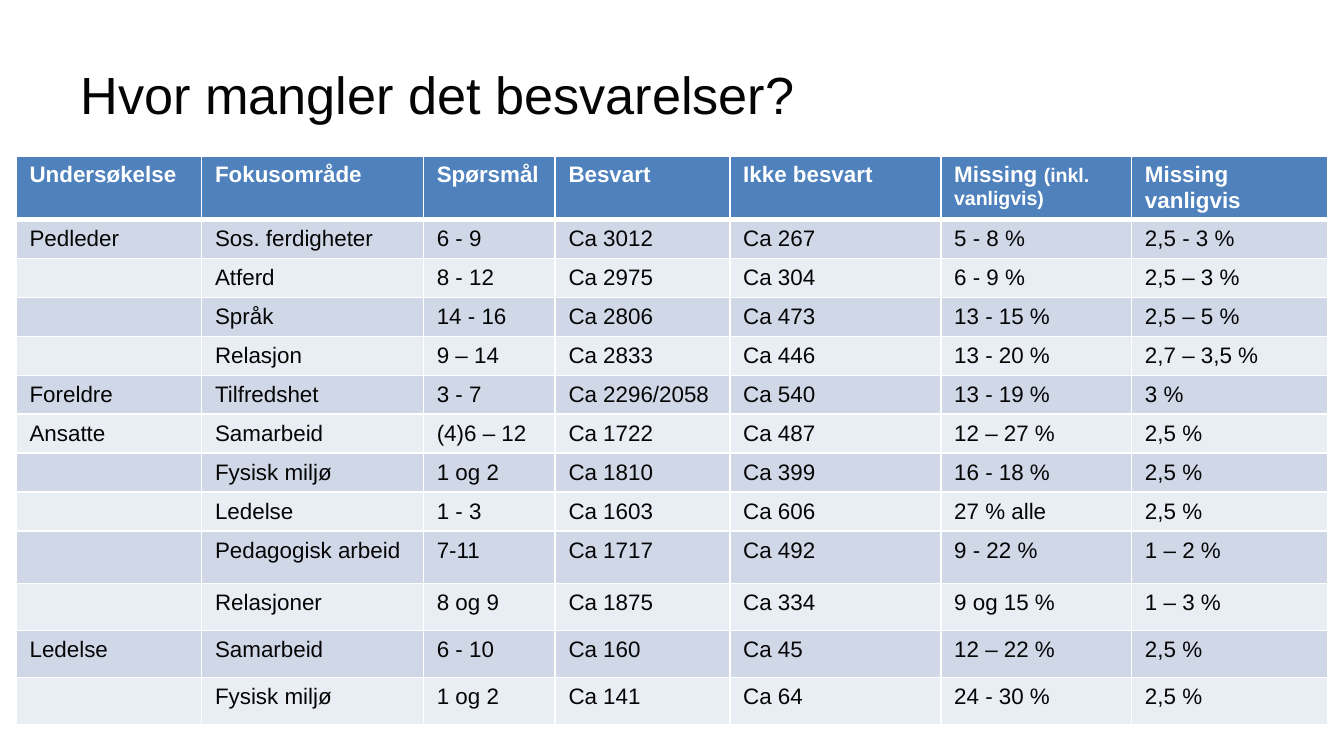
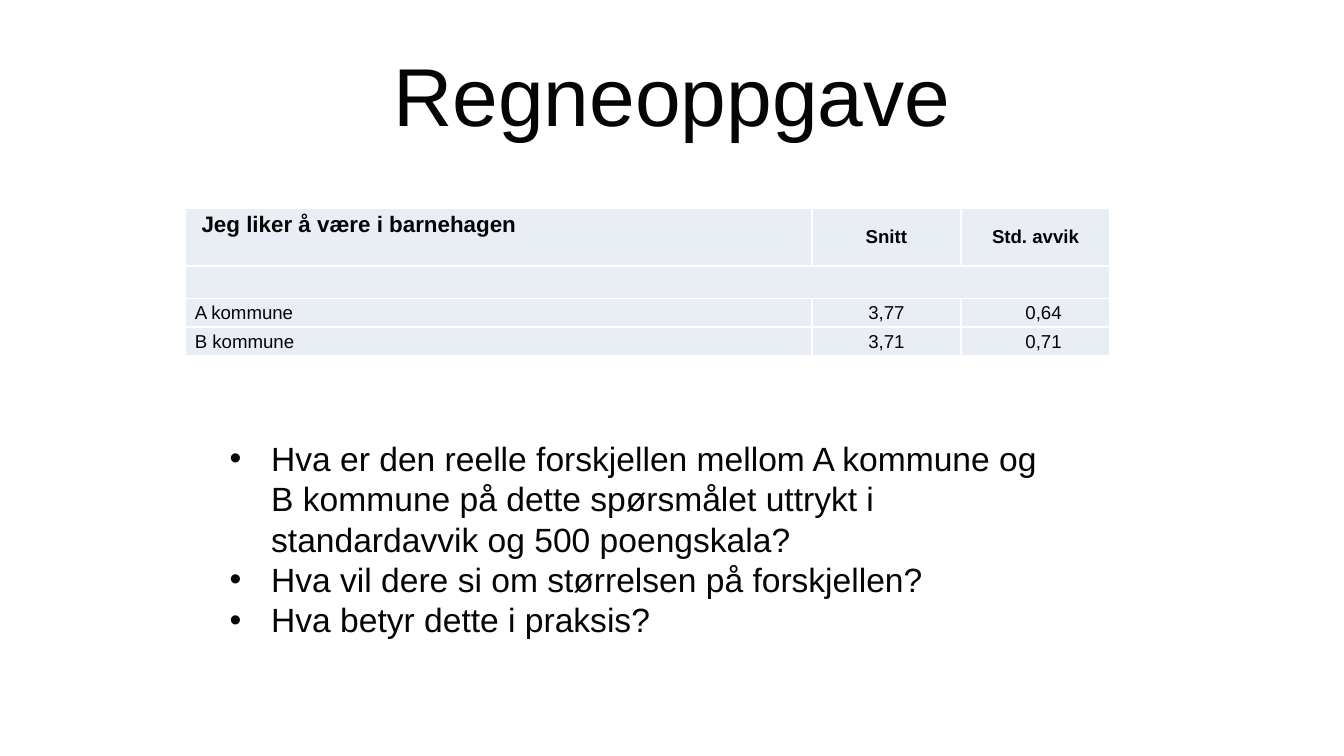
from lxml import etree
from pptx import Presentation
from pptx import util as u
from pptx.dml.color import RGBColor
from pptx.enum import text as t
from pptx.oxml.ns import qn

HUES = {"ink": "050505", "white": "FFFFFF", "head": "4F81BD",
        "dark": "D0D8E8", "light": "E9EDF4"}
FACE = "Arial"
LEFT, MID = t.PP_ALIGN.LEFT, t.PP_ALIGN.CENTER

# Slide 1 table
GAPS = [
    ["Undersøkelse", "Fokusområde", "Spørsmål", "Besvart", "Ikke besvart",
     [("Missing ", 12), ("(inkl. vanligvis)", 10.5)], "Missing vanligvis"],
    ["Pedleder", "Sos. ferdigheter", "6 - 9", "Ca 3012", "Ca 267", "5 - 8 %", "2,5 - 3 %"],
    ["", "Atferd", "8 - 12", "Ca 2975", "Ca 304", "6 - 9 %", "2,5 – 3 %"],
    ["", "Språk", "14 - 16", "Ca 2806", "Ca 473", "13 - 15 %", "2,5 – 5 %"],
    ["", "Relasjon", "9 – 14", "Ca 2833", "Ca 446", "13 - 20 %", "2,7 – 3,5 %"],
    ["Foreldre", "Tilfredshet", "3 - 7", "Ca 2296/2058", "Ca 540", "13 - 19 %", "3 %"],
    ["Ansatte", "Samarbeid", "(4)6 – 12", "Ca 1722", "Ca 487", "12 – 27 %", "2,5 %"],
    ["", "Fysisk miljø", "1 og 2", "Ca 1810", "Ca 399", "16 - 18 %", "2,5 %"],
    ["", "Ledelse", "1 - 3", "Ca 1603", "Ca 606", "27 % alle", "2,5 %"],
    ["", "Pedagogisk arbeid", "7-11", "Ca 1717", "Ca 492", "9 - 22 %", "1 – 2 %"],
    ["", "Relasjoner", "8 og 9", "Ca 1875", "Ca 334", "9 og 15 %", "1 – 3 %"],
    ["Ledelse", "Samarbeid", "6 - 10", "Ca 160", "Ca 45", "12 – 22 %", "2,5 %"],
    ["", "Fysisk miljø", "1 og 2", "Ca 141", "Ca 64", "24 - 30 %", "2,5 %"],
]

# Slide 2 table and questions
MEANS = [
    ["Jeg liker å være i barnehagen", "Snitt", "Std. avvik"],
    ["", "", ""],
    ["A kommune", "3,77", "0,64"],
    ["B kommune", "3,71", "0,71"],
]
TASKS = [
    "Hva er den reelle forskjellen mellom A kommune og B kommune på dette "
    "spørsmålet uttrykt i standardavvik og 500 poengskala?",
    "Hva vil dere si om størrelsen på forskjellen?",
    "Hva betyr dette i praksis?",
]


def box(*vals):
    return [u.Inches(v) for v in vals]


def apply(item, **vals):
    for key, val in vals.items():
        setattr(item, key, val)


def write(par, words, size, hue="ink", bold=False, align=LEFT):
    """Fill a paragraph with a string or a list of (words, size)."""
    par.alignment = align
    parts = [(words, size)] if isinstance(words, str) else words
    for part, pts in parts:
        if part:
            run = par.add_run()
            run.text = part
            apply(run.font, name=FACE, size=u.Pt(pts), bold=bold)
            run.font.color.rgb = RGBColor.from_string(HUES[hue])
        else:
            # An empty cell keeps the height of its text size
            end = etree.SubElement(par._p, qn("a:endParaRPr"))
            end.set("sz", str(int(pts * 100)))
            etree.SubElement(end, qn("a:latin")).set("typeface", FACE)


def edge(cell, **wide):
    """Draw white cell borders; wide gives widths for sides L, R, T, B."""
    props = cell._tc.get_or_add_tcPr()
    for side in "LRTB":
        line = etree.SubElement(props, qn("a:ln" + side))
        line.set("w", str(u.Pt(wide.get(side, 1))))
        fill = etree.SubElement(line, qn("a:solidFill"))
        etree.SubElement(fill, qn("a:srgbClr")).set("val", HUES["white"])


def paint(cell, hue):
    cell.fill.solid()
    cell.fill.fore_color.rgb = RGBColor.from_string(HUES[hue])


def grid(slide, rows, left, top, cols, highs):
    """Add an empty table with the given column widths and row heights."""
    frame = slide.shapes.add_table(
        len(rows), len(cols), *box(left, top, sum(cols), sum(highs)))
    table = frame.table
    table.horz_banding = False
    for col, wide in zip(table.columns, cols):
        col.width = u.Inches(wide)
    for row, high in zip(table.rows, highs):
        row.height = u.Inches(high)
    return table


def start(deck, words, size, align):
    """Add a slide with its title."""
    slide = deck.slides.add_slide(deck.slide_layouts[5])
    title = slide.shapes.title
    left, top, wide, high = box(0.5, 0.23, 9, 0.94)
    apply(title, left=left, top=top, width=wide, height=high)
    apply(title.text_frame, vertical_anchor=t.MSO_ANCHOR.MIDDLE,
          word_wrap=True, auto_size=t.MSO_AUTO_SIZE.NONE)
    write(title.text_frame.paragraphs[0], words, size, align=align)
    return slide


def gaps(slide):
    """Banded table of missing answers."""
    table = grid(slide, GAPS, 0.12, 1.16,
                 [1.38, 1.65, 0.98, 1.3, 1.57, 1.42, 1.46],
                 [0.46] + [0.29] * 8 + [0.39] + [0.35] * 3)
    for r, row in enumerate(GAPS):
        head = r == 0
        hue = "head" if head else ("light", "dark")[r % 2]
        for c, words in enumerate(row):
            cell = table.cell(r, c)
            edge(cell, B=3 if head else 1, T=3 if r == 1 else 1)
            paint(cell, hue)
            write(cell.text_frame.paragraphs[0], words, 12,
                  "white" if head else "ink", head)


def means(slide):
    """Plain table of means and deviations."""
    table = grid(slide, MEANS, 1.38, 1.55, [4.66, 1.11, 1.11],
                 [0.43, 0.24, 0.21, 0.21])
    for r, row in enumerate(MEANS):
        for c, words in enumerate(row):
            cell = table.cell(r, c)
            lead = r == c == 0
            # The lead cell and the last column's values sit further right
            left = 0.12 if lead else 0.19 if r and c == 2 else 0.07
            apply(cell, margin_left=u.Inches(left), margin_right=u.Inches(0.07),
                  margin_top=u.Inches(0.03), margin_bottom=u.Inches(0.03),
                  vertical_anchor=t.MSO_ANCHOR.TOP if lead else t.MSO_ANCHOR.MIDDLE)
            edge(cell)
            paint(cell, "light")
            write(cell.text_frame.paragraphs[0], words, 12 if lead else 10,
                  bold=r == 0, align=MID if c else LEFT)
    table.cell(1, 0).merge(table.cell(1, 2))


def tasks(slide):
    """Bulleted questions."""
    frame = slide.shapes.add_textbox(*box(1.61, 3.21, 6.3, 1.62)).text_frame
    apply(frame, word_wrap=True, auto_size=t.MSO_AUTO_SIZE.SHAPE_TO_FIT_TEXT)
    for i, words in enumerate(TASKS):
        par = frame.add_paragraph() if i else frame.paragraphs[0]
        props = par._p.get_or_add_pPr()
        props.set("marL", str(u.Inches(0.31)))
        props.set("indent", str(-u.Inches(0.31)))
        etree.SubElement(props, qn("a:buFont")).set("typeface", FACE)
        etree.SubElement(props, qn("a:buChar")).set("char", "•")
        write(par, words, 18)


def main():
    deck = Presentation()
    # Widescreen, 16 to 9
    wide = u.Inches(10)
    apply(deck, slide_width=wide, slide_height=wide * 9 // 16)

    # Slide 1: missing answers
    gaps(start(deck, "Hvor mangler det besvarelser?", 28, LEFT))

    # Slide 2: exercise
    slide = start(deck, "Regneoppgave", 44, MID)
    means(slide)
    tasks(slide)

    deck.save("out.pptx")


if __name__ == "__main__":
    main()
